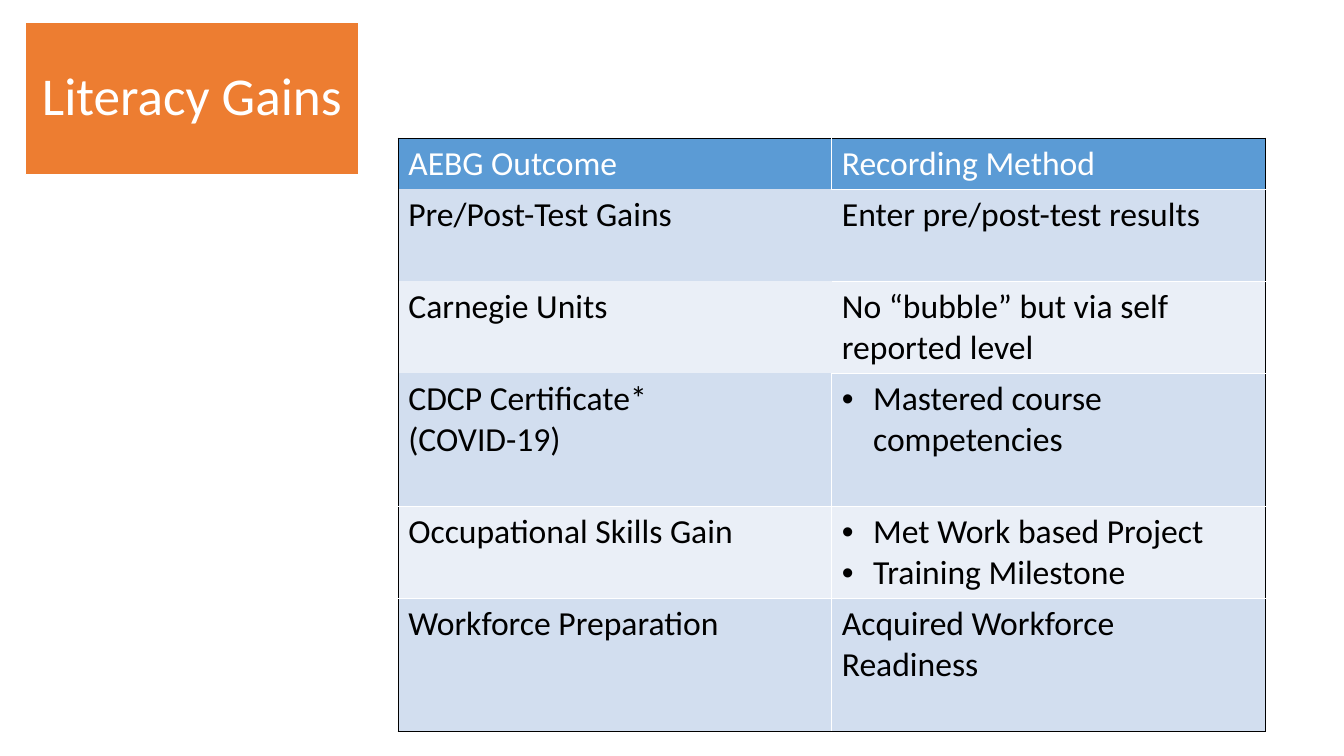
from pptx import Presentation
from pptx.dml.color import RGBColor as RGB
from pptx.enum.text import MSO_ANCHOR as ANCHOR, PP_ALIGN as ALIGN
from pptx.oxml import parse_xml
from pptx.oxml.ns import nsdecls
from pptx.util import Inches, Pt

C = {"orange": "ED7D31", "blue": "5B9BD5", "band": "D2DEEF",
     "light": "EAEFF7", "white": "FFFFFF", "black": "000000"}
BULLET = "• "
ROWS = [
    (0.51, "AEBG Outcome", "Recording Method"),
    (0.91, "Pre/Post-Test Gains", "Enter pre/post-test results"),
    (0.91, "Carnegie Units", "No “bubble” but via self reported level"),
    (1.32, "CDCP Certificate*\n(COVID-19)", "• Mastered course competencies"),
    (0.91, "Occupational Skills Gain",
     "• Met Work based Project\n• Training Milestone"),
    (1.32, "Workforce Preparation", "Acquired Workforce Readiness"),
]


def style_text(p, size, color):
    for r in p.runs:
        r.font.name = "Calibri"
        r.font.size = Pt(size)
        r.font.color.rgb = RGB.from_string(C[color])


def set_borders(cell, colors):
    tcPr = cell._tc.get_or_add_tcPr()
    for i, (side, color) in enumerate(zip("LRTB", colors)):
        fill = (f'<a:solidFill><a:srgbClr val="{C[color]}"/></a:solidFill>'
                if color else "<a:noFill/>")
        tcPr.insert(i, parse_xml(
            f'<a:ln{side} {nsdecls("a")} w="12700">{fill}</a:ln{side}>'))


prs = Presentation()
prs.slide_width = Inches(13.33)
prs.slide_height = Inches(7.5)
s = prs.slides.add_slide(prs.slide_layouts[5])

title = s.shapes.title
title.left, title.top = Inches(0.25), Inches(0.22)
title.width, title.height = Inches(3.31), Inches(1.51)
title.fill.solid()
title.fill.fore_color.rgb = RGB.from_string(C["orange"])
title.line.color.rgb = RGB.from_string(C["white"])
title.line.width = Pt(1)
tf = title.text_frame
tf.text = "Literacy Gains"
tf.word_wrap = True
tf.vertical_anchor = ANCHOR.MIDDLE
tf.margin_left = tf.margin_right = Inches(0.16)
tf.margin_top = tf.margin_bottom = Inches(0.16)
p = tf.paragraphs[0]
p.alignment = ALIGN.CENTER
p.line_spacing = 0.9
style_text(p, 38, "white")

height = sum(row[0] for row in ROWS)
table = s.shapes.add_table(len(ROWS), 2, Inches(3.95), Inches(1.37),
                           Inches(8.6), Inches(height)).table
last = len(ROWS) - 1
for i, (row_height, *texts) in enumerate(ROWS):
    table.rows[i].height = Inches(row_height)
    for j, text in enumerate(texts):
        cell = table.cell(i, j)
        cell.text_frame.text = text.replace(BULLET, "")
        cell.fill.solid()
        fill = "blue" if i == 0 else "band" if i % 2 else "light"
        cell.fill.fore_color.rgb = RGB.from_string(C[fill])
        for p in cell.text_frame.paragraphs:
            style_text(p, 24, "white" if i == 0 else "black")
            if text.startswith(BULLET):
                pPr = p._p.get_or_add_pPr()
                pPr.set("marL", str(Inches(0.31)))
                pPr.set("indent", str(-Inches(0.31)))
                pPr.append(parse_xml(
                    f'<a:buFont {nsdecls("a")} typeface="Arial"/>'))
                pPr.append(parse_xml(f'<a:buChar {nsdecls("a")} char="•"/>'))
        middle = None if i in (1, 2) else "white"
        above = "black" if i == 0 else "white" if j or i > 3 else None
        below = "black" if i == last else "white" if j or i > 2 else None
        left, right = (middle, "black") if j else ("black", middle)
        set_borders(cell, (left, right, above, below))

prs.save("out.pptx")
